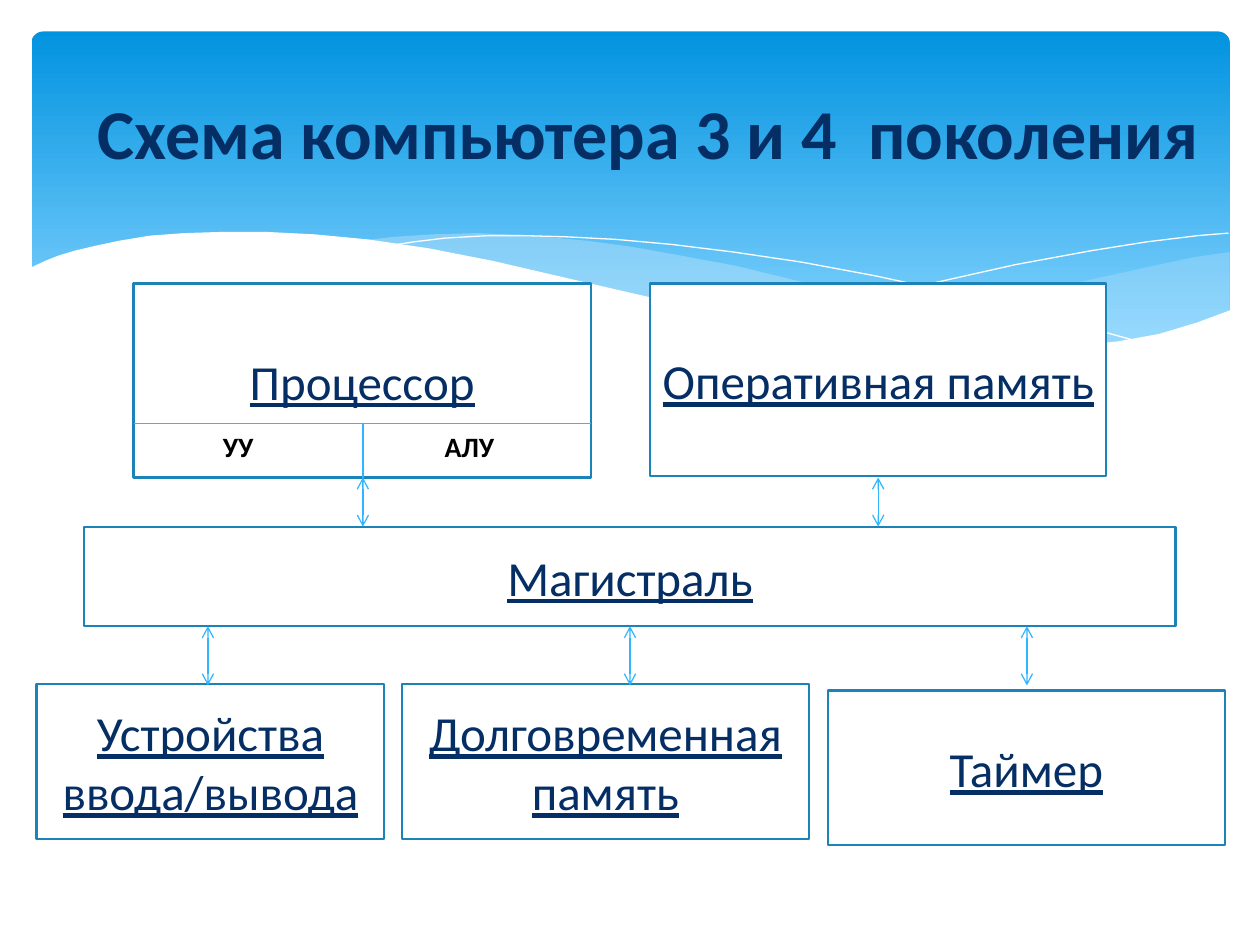
from lxml.etree import SubElement
from pptx import Presentation
from pptx.dml.color import RGBColor
from pptx.enum.shapes import MSO_CONNECTOR, MSO_SHAPE
from pptx.enum.text import MSO_ANCHOR, MSO_AUTO_SIZE, PP_ALIGN
from pptx.oxml.ns import qn
from pptx.util import Inches, Pt

TITLE = "Схема компьютера 3 и 4  поколения"
BLOCKS = [  # text, left, top, width, height
    ("Процессор", 1.06, 2.25, 3.63, 1.54),
    ("Оперативная память", 5.16, 2.25, 3.62, 1.53),
    ("Магистраль", 0.67, 4.18, 8.66, 0.79),
    ("Устройства ввода/вывода", 0.29, 5.43, 2.76, 1.23),
    ("Долговременная память", 3.19, 5.43, 3.23, 1.23),
    ("Таймер", 6.57, 5.48, 3.15, 1.23),
]
PROCESSOR_PARTS = [("УУ", 1.67, 0.5), ("АЛУ", 3.43, 0.67)]  # text, left, width
UPPER_LINKS = [2.88, 6.97]
LOWER_LINKS = [1.65, 5, 8.15]
PROCESSOR_SPLIT = 3.36

THEME = {
    "font": "Calibri",
    "navy": "052E65", "black": "000000", "white": "FFFFFF",
    "outline": "1C83B9", "link": "31B6FD", "haze": "C6E7FC",
    "sky": [(0, "0293E0"), (0.9, "83D3FE")],
    "title": 40, "block": 28, "part": 16,
}

RIGHT_HAZE = [
    (9.76, 2), (9.48, 2.04), (9.06, 2.13), (8.61, 2.23), (8.05, 2.37),
    (7.53, 2.48), (7.06, 2.57), (6.61, 2.65), (6.91, 2.69), (7.32, 2.74),
    (7.69, 2.77), (8.03, 2.78), (8.44, 2.77), (8.81, 2.73), (9.13, 2.67),
    (9.42, 2.59), (9.76, 2.47),
]
MIDDLE_HAZE = [
    (8.93, 2.73), (8.37, 2.65), (7.75, 2.54), (7.06, 2.4), (6.29, 2.22),
    (5.84, 2.11), (5.41, 2.03), (5.02, 1.96), (4.65, 1.91), (4.2, 1.87),
    (3.8, 1.85), (3.44, 1.86), (3.13, 1.88), (2.86, 1.91), (3.23, 1.96),
    (3.62, 2.03), (4.04, 2.11), (4.49, 2.22), (5.3, 2.4), (6.01, 2.55),
    (6.5, 2.64), (6.95, 2.7), (7.36, 2.75), (7.73, 2.77), (8.07, 2.78),
    (8.48, 2.77),
]
LONG_CREST = [
    (3.09, 1.95), (3.28, 1.92), (3.53, 1.89), (3.87, 1.87), (4.16, 1.87),
    (4.5, 1.88), (4.89, 1.9), (5.33, 1.94), (5.82, 2), (6.36, 2.08),
    (6.95, 2.19), (7.6, 2.33), (8.31, 2.51), (9.07, 2.72),
]
RIGHT_CREST = [
    (6.13, 2.57), (6.53, 2.46), (6.95, 2.35), (7.48, 2.23), (8.06, 2.1),
    (8.66, 1.99), (9.1, 1.92), (9.51, 1.87), (9.75, 1.85),
]
WHITE_WAVE = [
    (9.77, 2.46), (9.5, 2.56), (9.2, 2.65), (8.87, 2.71), (8.5, 2.75),
    (8.09, 2.77), (7.61, 2.75), (7.08, 2.7), (6.48, 2.62), (5.79, 2.5),
    (5.03, 2.33), (4.47, 2.2), (3.91, 2.07), (3.4, 1.97), (2.92, 1.9),
    (2.5, 1.86), (2.11, 1.84), (1.77, 1.84), (1.46, 1.85), (1.19, 1.87),
    (0.95, 1.91), (0.76, 1.95), (0.59, 1.99), (0.46, 2.03), (0.36, 2.07),
    (0.23, 2.13), (0.23, 3.29), (9.77, 3.29),
]


def color(name):
    return RGBColor.from_string(THEME[name])


def write(shape, text, align, format_values, ink):
    frame = shape.text_frame
    frame.vertical_anchor = MSO_ANCHOR.MIDDLE
    frame.word_wrap = True
    para = frame.paragraphs[0]
    para.alignment = align
    span = para.add_run()
    span.text = text
    span.font.name = THEME["font"]
    span.font.color.rgb = color(ink)
    for name, value in format_values.items():
        setattr(span.font, name, value)
    return frame


def add_wave(page, points, fill=None, opacity=100):
    """A filled area, or an open white hairline when no fill is given."""
    first, *rest = [(Inches(x), Inches(y)) for x, y in points]
    builder = page.shapes.build_freeform(*first)
    builder.add_line_segments(rest, close=fill is not None)
    wave = builder.convert_to_shape()
    wave.shadow.inherit = False
    if fill is None:
        wave.fill.background()
        wave.line.color.rgb = color("white")
        wave.line.width = Pt(0)
        return
    wave.line.fill.background()
    wave.fill.solid()
    wave.fill.fore_color.rgb = color(fill)
    if opacity < 100:
        shade = wave.fill._xPr.find(".//" + qn("a:srgbClr"))
        SubElement(shade, qn("a:alpha"), val=str(opacity * 1000))


def add_banner(page):
    banner = page.shapes.add_shape(
        MSO_SHAPE.ROUNDED_RECTANGLE, *map(Inches, (0.25, 0.25, 9.51, 2.7)))
    banner.adjustments[0] = 0.034
    banner.shadow.inherit = False
    banner.line.fill.background()
    banner.fill.gradient()
    banner.fill.gradient_angle = 270
    for stop, (position, tone) in zip(banner.fill.gradient_stops, THEME["sky"]):
        stop.position = position
        stop.color.rgb = RGBColor.from_string(tone)
    add_wave(page, RIGHT_HAZE, "haze", 29)
    add_wave(page, MIDDLE_HAZE, "haze", 40)
    add_wave(page, LONG_CREST)
    add_wave(page, RIGHT_CREST)
    add_wave(page, WHITE_WAVE, "white")


def add_title(page):
    title = page.shapes.title
    page.shapes._spTree.append(title._element)  # in front of the banner
    place = {"left": 0.51, "top": 0.36, "width": 9.27, "height": 1.37}
    for name, value in place.items():
        setattr(title, name, Inches(value))
    write(title, TITLE, PP_ALIGN.CENTER,
          {"size": Pt(THEME["title"]), "bold": True}, "navy")


def add_block(page, text, *place):
    block = page.shapes.add_shape(MSO_SHAPE.RECTANGLE, *map(Inches, place))
    block.shadow.inherit = False
    block.fill.solid()
    block.fill.fore_color.rgb = color("white")
    block.line.color.rgb = color("outline")
    block.line.width = Pt(1.25)
    write(block, text, PP_ALIGN.CENTER,
          {"size": Pt(THEME["block"]), "underline": True}, "navy")


def add_link(page, start, end, arrows=True):
    link = page.shapes.add_connector(
        MSO_CONNECTOR.STRAIGHT, *map(Inches, (*start, *end)))
    link.line.color.rgb = color("link")
    link.line.width = Pt(0.75)
    if arrows:
        for side in ("a:headEnd", "a:tailEnd"):
            SubElement(link.line._get_or_add_ln(), qn(side), type="arrow")
    SubElement(link._element.spPr, qn("a:effectLst"))


def add_part(page, text, left, width):
    part = page.shapes.add_textbox(
        *map(Inches, (left, PROCESSOR_SPLIT, width, 0.37)))
    frame = write(part, text, PP_ALIGN.LEFT,
                  {"size": Pt(THEME["part"]), "bold": True}, "black")
    frame.vertical_anchor = MSO_ANCHOR.TOP
    frame.word_wrap = False
    frame.auto_size = MSO_AUTO_SIZE.SHAPE_TO_FIT_TEXT


def main():
    deck = Presentation()
    deck.slide_width, deck.slide_height = Inches(10), Inches(7.5)
    page = deck.slides.add_slide(deck.slide_layouts[5])
    add_banner(page)
    add_title(page)
    for block in BLOCKS:
        add_block(page, *block)
    for x in UPPER_LINKS:
        add_link(page, (x, 3.79), (x, 4.18))
    for x in LOWER_LINKS:
        add_link(page, (x, 4.97), (x, 5.44))
    _, left, top, width, height = BLOCKS[0]
    middle = UPPER_LINKS[0]
    add_link(page, (left, PROCESSOR_SPLIT), (left + width, PROCESSOR_SPLIT), False)
    add_link(page, (middle, top + height), (middle, PROCESSOR_SPLIT), False)
    for part in PROCESSOR_PARTS:
        add_part(page, *part)
    deck.save("out.pptx")


if __name__ == "__main__":
    main()
